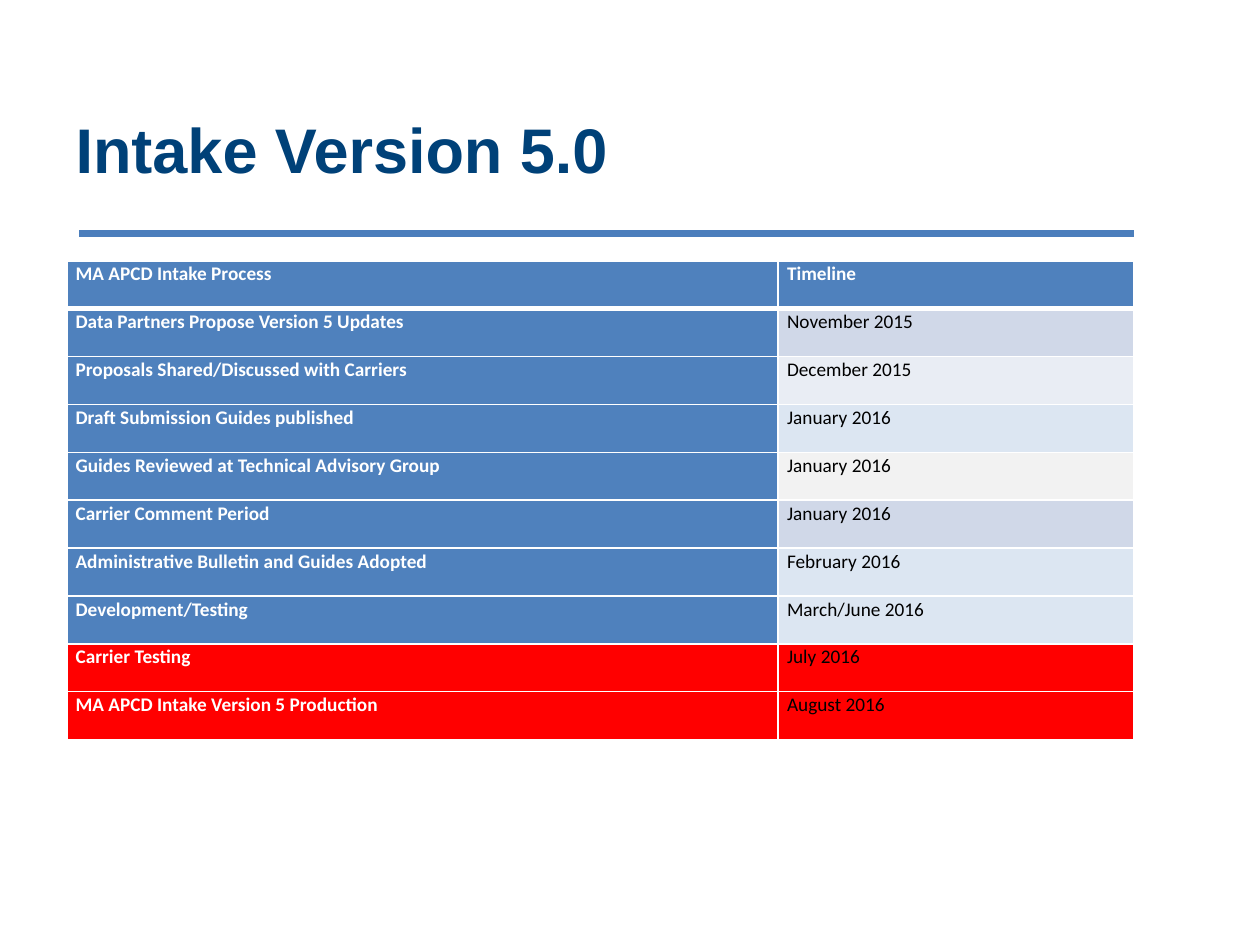
from dataclasses import dataclass

from lxml import etree
from pptx import Presentation
from pptx.dml.color import RGBColor
from pptx.enum.shapes import MSO_CONNECTOR
from pptx.enum.text import MSO_ANCHOR, PP_ALIGN
from pptx.oxml.ns import qn
from pptx.util import Inches, Pt

STRAIGHT = MSO_CONNECTOR.STRAIGHT
MIDDLE, TOP = MSO_ANCHOR.MIDDLE, MSO_ANCHOR.TOP
LEFT = PP_ALIGN.LEFT

WIDTH, HEIGHT = Inches(10), Inches(7.5)
ROW_HEIGHT = Inches(0.38)
TABLE_WIDTH = Inches(8.47)
COLUMN_SHARES = (2 / 3, 1 / 3)
BLUE, RED, WHITE, BLACK = "4F81BD", "FF0000", "FFFFFF", "000000"
MIST, PALE, ICE, GREY = "D0D8E8", "E9EDF4", "DCE6F2", "F2F2F2"


@dataclass
class Step:
    process: str
    timeline: str
    timeline_fill: str
    process_fill: str = BLUE


HEADER = Step("MA APCD Intake Process", "Timeline", BLUE)
STEPS = [
    Step("Data Partners Propose Version 5 Updates", "November 2015", MIST),
    Step("Proposals Shared/Discussed with Carriers", "December 2015", PALE),
    Step("Draft Submission Guides published", "January 2016", ICE),
    Step("Guides Reviewed at Technical Advisory Group", "January 2016", GREY),
    Step("Carrier Comment Period", "January 2016", MIST),
    Step("Administrative Bulletin and Guides Adopted", "February 2016", ICE),
    Step("Development/Testing", "March/June 2016", ICE),
    Step("Carrier Testing", "July 2016", RED, RED),
    Step("MA APCD Intake Version 5 Production", "August 2016", RED, RED),
]


def rgb(value: str) -> RGBColor:
    return RGBColor.from_string(value)


def style_font(font, name: str, size: float, color: str, bold: bool) -> None:
    font.name, font.size, font.bold = name, Pt(size), bold
    font.color.rgb = rgb(color)


def add_borders(cell, top: float, bottom: float) -> None:
    tc_pr = cell._tc.get_or_add_tcPr()
    for side, width in (("L", 1), ("R", 1), ("T", top), ("B", bottom)):
        ln = etree.SubElement(tc_pr, qn(f"a:ln{side}"), w=str(Pt(width)))
        fill = etree.SubElement(ln, qn("a:solidFill"))
        etree.SubElement(fill, qn("a:srgbClr"), val=WHITE)


def fill_cell(cell, text: str, fill: str, color: str, bold: bool,
              top: float, bottom: float) -> None:
    add_borders(cell, top, bottom)
    cell.fill.solid()
    cell.fill.fore_color.rgb = rgb(fill)
    cell.margin_left = cell.margin_right = Inches(0.07)
    cell.margin_top = cell.margin_bottom = 0
    cell.vertical_anchor = TOP
    cell.text = text
    p = cell.text_frame.paragraphs[0]
    p.line_spacing = 1.07
    style_font(p.font, "Calibri", 11, color, bold)


def add_title(s, text: str) -> None:
    sp = s.shapes.title
    sp.left, sp.top = int(WIDTH * 0.05), Inches(0.62)
    sp.width, sp.height = int(WIDTH * 0.85), Inches(1.11)
    tf = sp.text_frame
    tf.text = text
    tf.vertical_anchor = MIDDLE
    p = tf.paragraphs[0]
    p.alignment = LEFT
    style_font(p.font, "Arial", 36, "004178", True)


def add_rule(s) -> None:
    y = Inches(1.85)
    line = s.shapes.add_connector(STRAIGHT, Inches(0.63), y, int(WIDTH * 0.9), y)
    line.line.color.rgb = rgb("4B7EBC")
    line.line.width = Pt(4)
    etree.SubElement(line._element.spPr, qn("a:effectLst"))


def add_timeline(s, rows: list[Step]) -> None:
    table = s.shapes.add_table(len(rows), len(COLUMN_SHARES), Inches(0.53),
                               Inches(2.07), TABLE_WIDTH,
                               ROW_HEIGHT * len(rows)).table
    for column, share in zip(table.columns, COLUMN_SHARES):
        column.width = int(TABLE_WIDTH * share)
    for i, step in enumerate(rows):
        table.rows[i].height = ROW_HEIGHT
        header = i == 0
        top, bottom = 3 if i == 1 else 1, 3 if header else 1
        fill_cell(table.cell(i, 0), step.process, step.process_fill,
                  WHITE, True, top, bottom)
        fill_cell(table.cell(i, 1), step.timeline, step.timeline_fill,
                  WHITE if header else BLACK, header, top, bottom)


def main() -> None:
    prs = Presentation()
    prs.slide_width, prs.slide_height = WIDTH, HEIGHT
    s = prs.slides.add_slide(prs.slide_layouts[5])
    add_rule(s)
    add_title(s, "Intake Version 5.0")
    add_timeline(s, [HEADER, *STEPS])
    prs.save("out.pptx")


if __name__ == "__main__":
    main()
